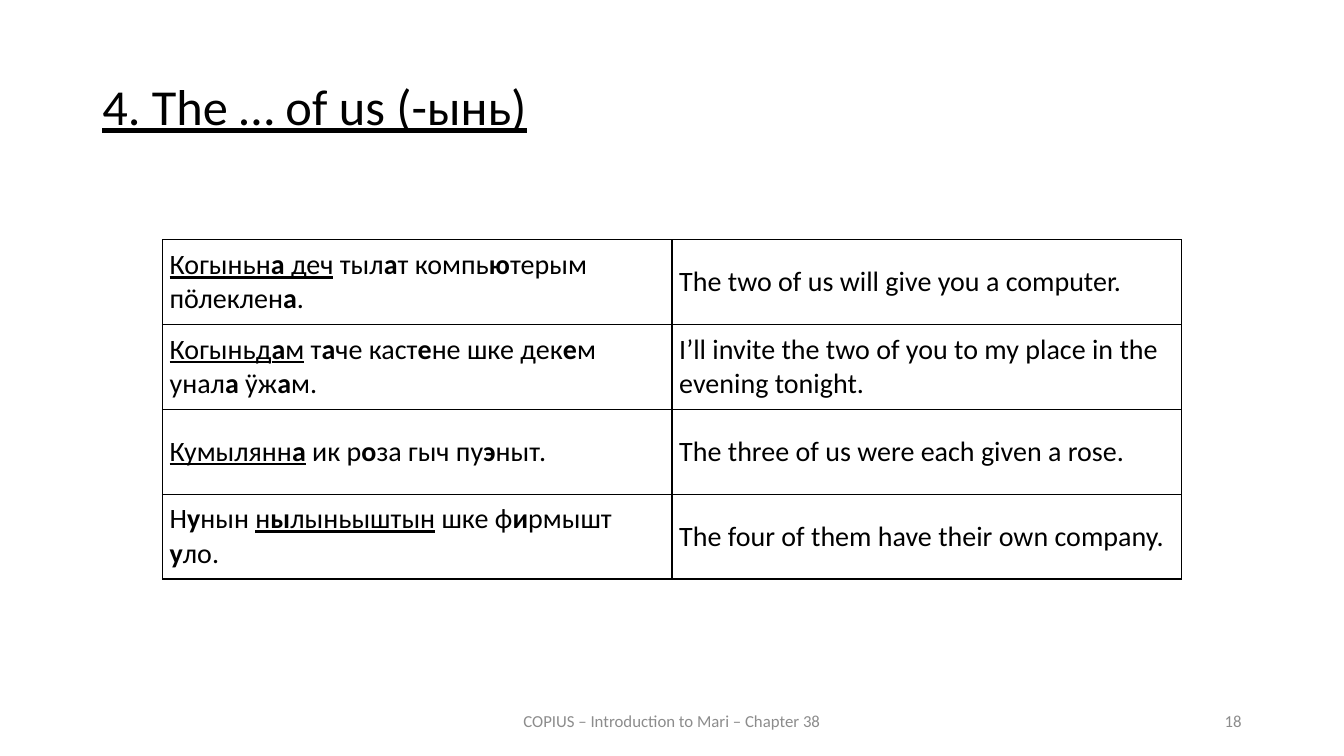
"""Builds a grammar slide with a bilingual table of Mari example sentences."""
from lxml.etree import SubElement
from pptx import Presentation
from pptx.dml.color import RGBColor
from pptx.enum.text import MSO_ANCHOR, PP_ALIGN
from pptx.oxml.ns import qn
from pptx.util import Pt

BLACK = RGBColor(0x00, 0x00, 0x00)
GRAY = RGBColor(0x8C, 0x8C, 0x8C)
FONT = "Calibri"
UNDERLINE_MARK = "_"
STRESS_MARK = "*"
EXAMPLES = [
    ("_Когыньн*а* деч_ тыл*а*т компь*ю*терым пӧлеклен*а*.",
     "The two of us will give you a computer."),
    ("_Когыньд*а*м_ т*а*че каст*е*не шке дек*е*м унал*а* ӱж*а*м.",
     "I’ll invite the two of you to my place in the evening tonight."),
    ("_Кумылянн*а*_ ик р*о*за гыч пу*э*ныт.",
     "The three of us were each given a rose."),
    ("Н*у*нын _н*ы*лыньыштын_ шке ф*и*рмышт *у*ло.",
     "The four of them have their own company."),
]


def add_marked_text(para, text, size, color):
    for part, passage in enumerate(text.split(UNDERLINE_MARK)):
        for piece, letters in enumerate(passage.split(STRESS_MARK)):
            if letters:
                span = para.add_run()
                span.text = letters
                span.font.name = FONT
                span.font.size = Pt(size)
                span.font.color.rgb = color
                span.font.underline = part % 2 == 1
                span.font.bold = piece % 2 == 1


def add_label(page, left, top, width, height, text, size, color, align, anchor):
    box = page.shapes.add_textbox(Pt(left), Pt(top), Pt(width), Pt(height))
    frame = box.text_frame
    frame.word_wrap = True
    frame.vertical_anchor = anchor
    para = frame.paragraphs[0]
    para.alignment = align
    add_marked_text(para, text, size, color)
    return para


def add_title(page, left, top, width, height):
    para = add_label(page, left, top, width, height, "_4. The … of us (-ынь)_",
                     36, BLACK, PP_ALIGN.JUSTIFY, MSO_ANCHOR.TOP)
    para.line_spacing = 0.9


def add_footer(page, left, top, width, height):
    number_width = 216
    caption_width = 324
    number_left = left + width - number_width
    caption_left = left + (width - caption_width) / 2
    add_label(page, caption_left, top, caption_width, height,
              "COPIUS – Introduction to Mari – Chapter 38",
              12, GRAY, PP_ALIGN.CENTER, MSO_ANCHOR.MIDDLE)
    add_label(page, number_left, top, number_width, height, "18",
              12, GRAY, PP_ALIGN.RIGHT, MSO_ANCHOR.MIDDLE)


def add_borders(cell):
    properties = cell._tc.get_or_add_tcPr()
    for position, side in enumerate(("a:lnL", "a:lnR", "a:lnT", "a:lnB")):
        line = properties.makeelement(qn(side), {"w": str(Pt(1))})
        properties.insert(position, line)
        fill = SubElement(line, qn("a:solidFill"))
        SubElement(fill, qn("a:srgbClr"), val=str(BLACK))


def add_examples(page, left, top, width, height):
    frame = page.shapes.add_table(len(EXAMPLES), 2, Pt(left), Pt(top),
                                  Pt(width), Pt(height))
    table = frame.table
    table.first_row = False
    table.horz_banding = False
    for column in table.columns:
        column.width = Pt(width / 2)
    for row, sentences in zip(table.rows, EXAMPLES):
        row.height = Pt(height / len(EXAMPLES))
        for cell, sentence in zip(row.cells, sentences):
            cell.fill.background()
            cell.vertical_anchor = MSO_ANCHOR.MIDDLE
            cell.margin_left = cell.margin_right = Pt(5.2)
            cell.margin_top = cell.margin_bottom = Pt(0)
            add_marked_text(cell.text_frame.paragraphs[0], sentence, 20, BLACK)
            add_borders(cell)


def main():
    deck = Presentation()
    deck.slide_width = Pt(960)
    deck.slide_height = Pt(540)
    page = deck.slides.add_slide(deck.slide_layouts[6])
    add_title(page, 66, 54.7, 828, 60)
    add_footer(page, 66, 500.5, 828, 28.75)
    add_examples(page, 116, 171.2, 728, 242.4)
    deck.save("out.pptx")


if __name__ == "__main__":
    main()
